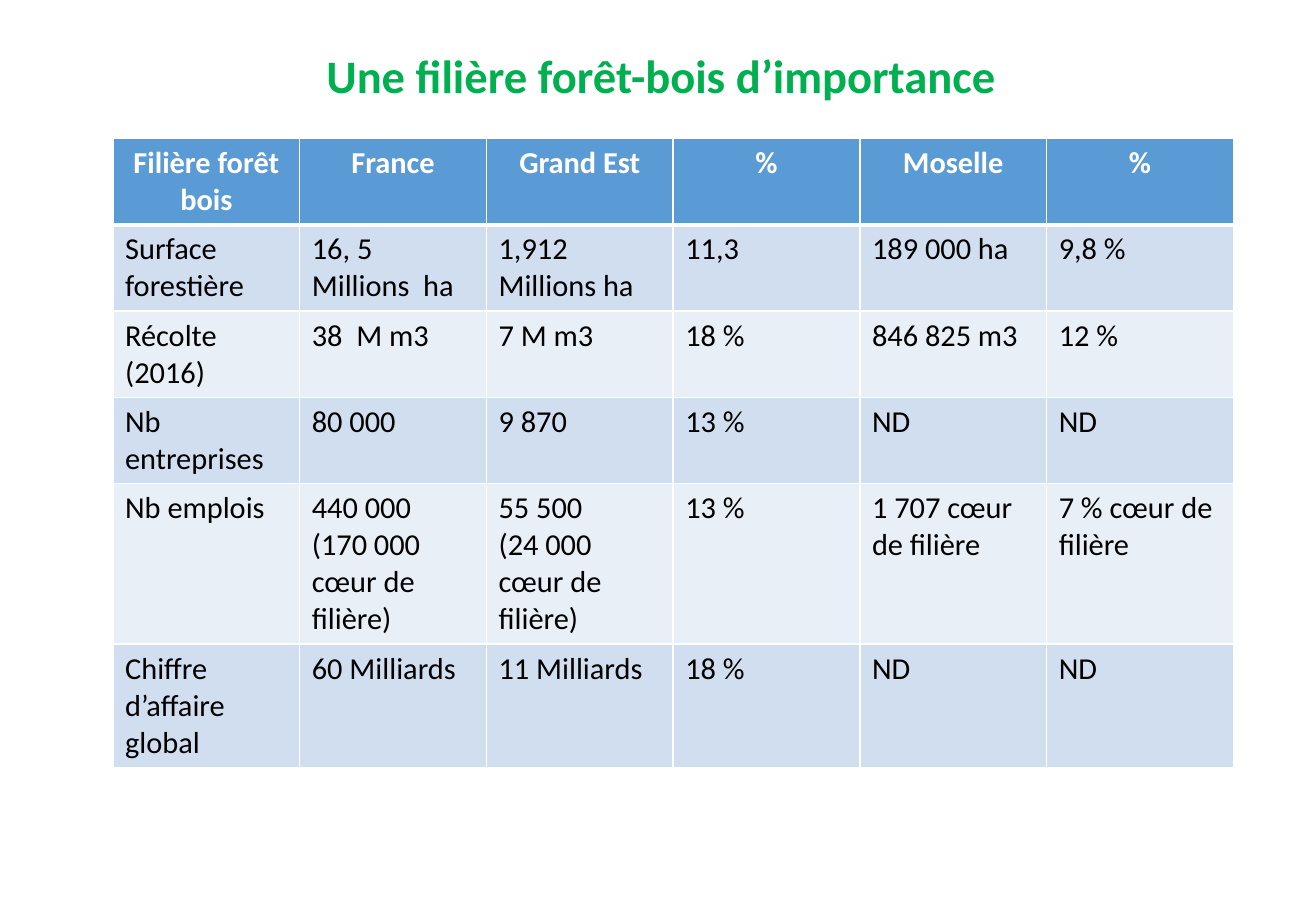
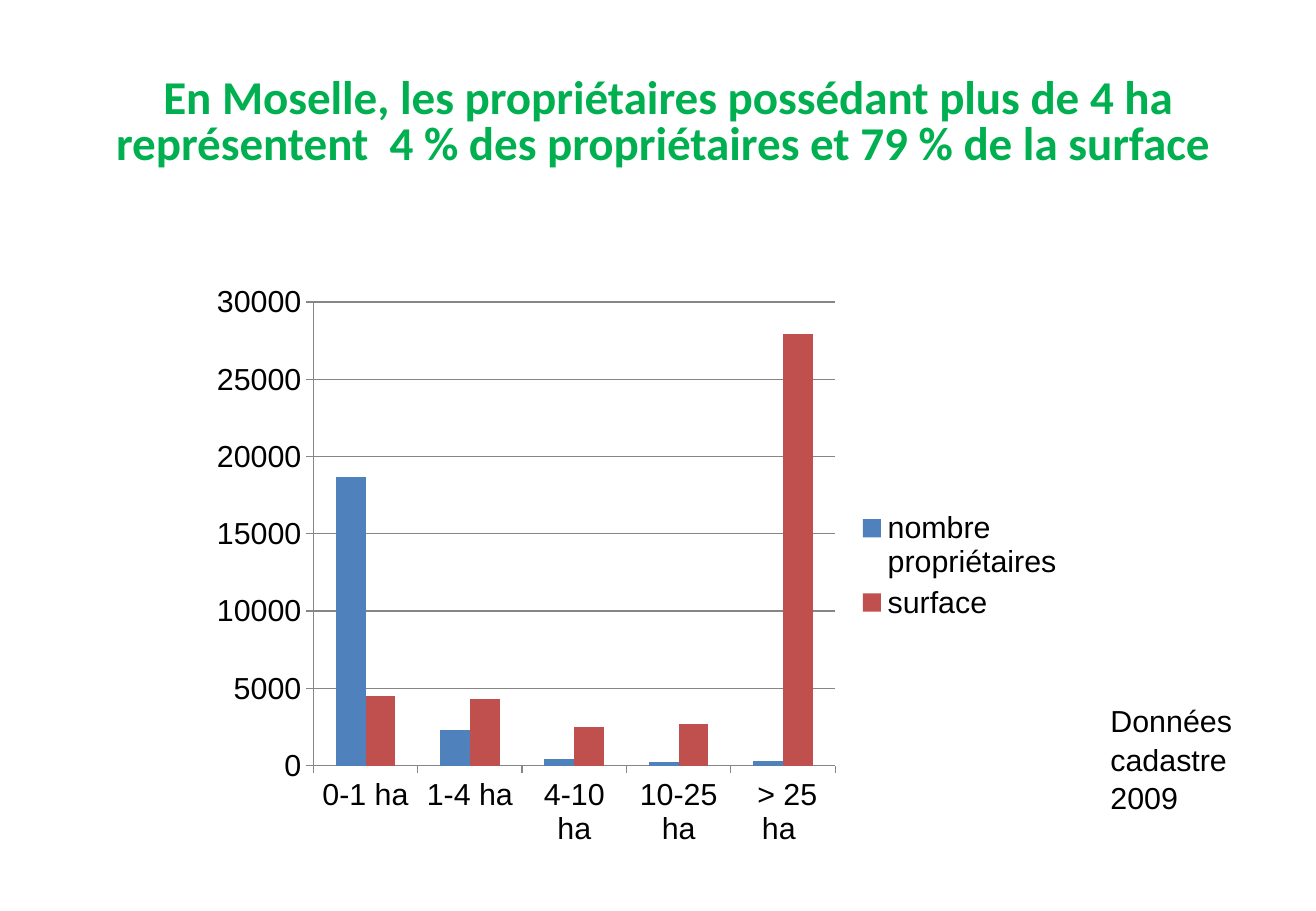
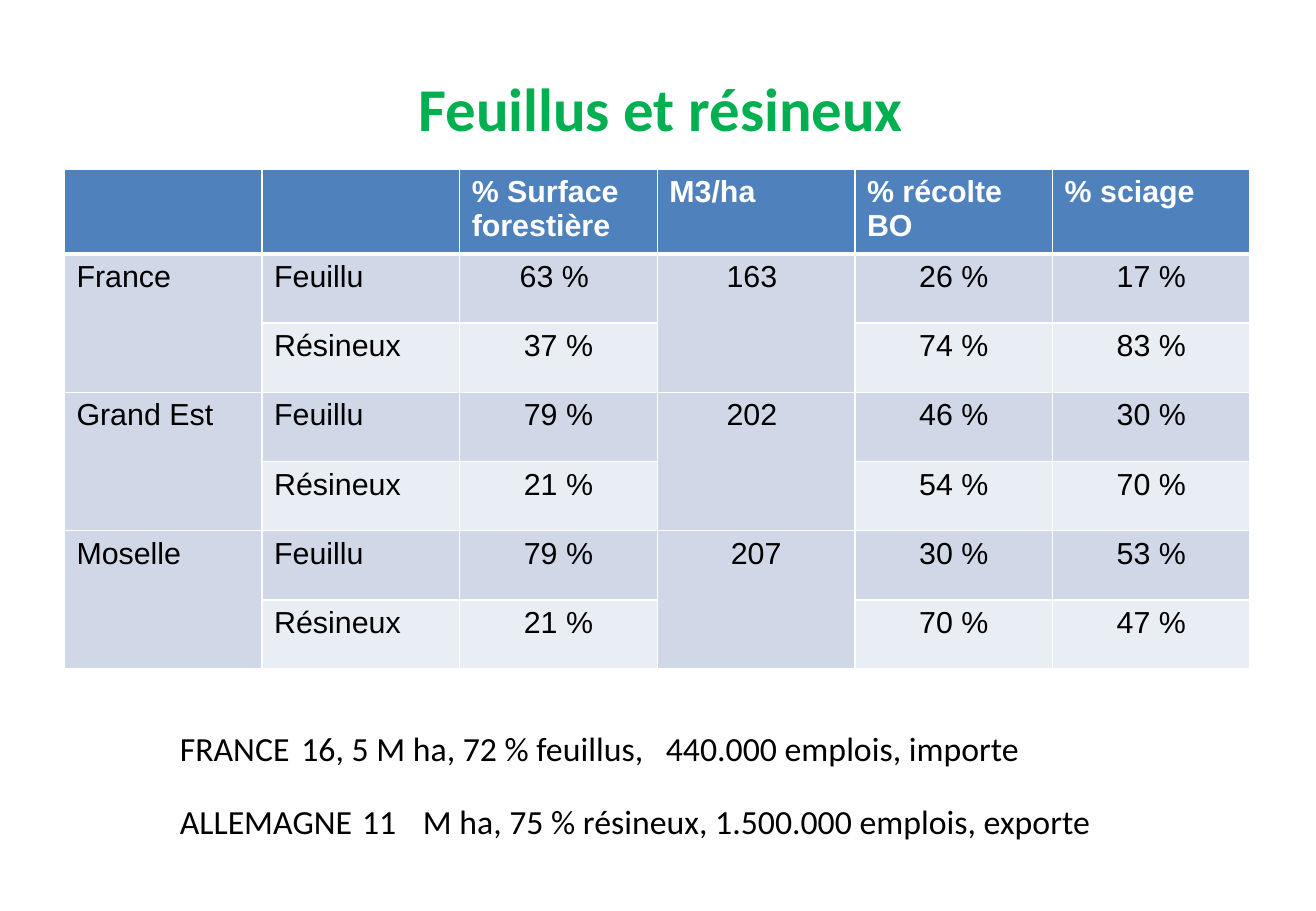
from dataclasses import dataclass

from lxml import etree
from pptx import Presentation
from pptx import util as u
from pptx.chart.data import CategoryChartData
from pptx.dml.color import RGBColor
from pptx.enum import chart as ch, text as tx
from pptx.oxml.ns import qn

# Shared colours and fonts
GREEN = RGBColor(0x00, 0xB0, 0x50)
BLACK = RGBColor(0x00, 0x00, 0x00)
WHITE = RGBColor(0xFF, 0xFF, 0xFF)
BLUE = RGBColor(0x4F, 0x81, 0xBD)
RED = RGBColor(0xC0, 0x50, 0x4D)
GREY = RGBColor(0x86, 0x86, 0x86)
SKY = RGBColor(0x5B, 0x9B, 0xD5)
SANS, ARIAL = "Calibri", "Arial"
LEFT, MID = tx.PP_ALIGN.LEFT, tx.PP_ALIGN.CENTER


@dataclass(frozen=True)
class Box:
    x: float
    y: float
    w: float
    h: float

    def lens(self) -> tuple:
        return tuple(u.Inches(v) for v in (self.x, self.y, self.w, self.h))


@dataclass(frozen=True)
class Face:
    name: str
    size: float
    color: RGBColor = BLACK
    bold: bool = False


@dataclass(frozen=True)
class Look:
    """Style of one table; each row is a list of cell texts."""
    font: str
    head: RGBColor
    odd: RGBColor
    even: RGBColor
    head_al: tx.PP_ALIGN
    mid_from: int
    thin: float


FOREST = Look(SANS, SKY, RGBColor(0xD1, 0xDE, 0xEF), RGBColor(0xE9, 0xEF, 0xF7),
              MID, 6, 0.96)
SPLIT = Look(ARIAL, BLUE, RGBColor(0xD0, 0xD8, 0xE8), RGBColor(0xE9, 0xED, 0xF4),
             LEFT, 2, 1)

FIGURES = [
    ["Filière forêt bois", "France", "Grand Est", "%", "Moselle", "%"],
    ["Surface forestière", "16, 5 Millions  ha", "1,912 Millions ha", "11,3",
     "189 000 ha", "9,8 %"],
    ["Récolte (2016)", "38  M m3", "7 M m3", "18 %", "846 825 m3", "12 %"],
    ["Nb entreprises", "80 000", "9 870", "13 %", "ND", "ND"],
    ["Nb emplois", "440 000\n(170 000 cœur de filière)",
     "55 500\n(24 000 cœur de filière)", "13 %", "1 707 cœur de filière",
     "7 % cœur de filière"],
    ["Chiffre d’affaire global", "60 Milliards", "11 Milliards", "18 %", "ND", "ND"],
]
SHARES = [
    ["", "", "% Surface forestière", "M3/ha", "% récolte BO", "% sciage"],
    ["France", "Feuillu", "63 % ", "163 ", "26 %", "17 %"],
    ["", "Résineux", "37 %", "", "74 %", "83 %"],
    ["Grand Est", "Feuillu", "79 %", "202 ", "46 %", "30 %"],
    ["", "Résineux", "21 %", "", "54 %", "70 %"],
    ["Moselle", "Feuillu", "79 %", "207", "30 %", "53 %"],
    ["", "Résineux", "21 %", "", "70 %", "47 %"],
]
SIZES = ["0-1 ha", "1-4 ha", "4-10 ha", "10-25 ha", " > 25 ha "]
SERIES = [
    ("nombre propriétaires", (18700, 2300, 400, 200, 300), BLUE),
    ("surface", (4500, 4300, 2500, 2700, 27900), RED),
]
# Text of each line with its tab stops in inches
LANDS = [
    ("FRANCE\t16, 5 M ha, 72 % feuillus,\t440.000 emplois, importe", (2.01, 5.19)),
    ("ALLEMAGNE\t11\tM ha, 75 % résineux, 1.500.000 emplois, exporte", (3.01, 3.54)),
]


def style(font, face: Face) -> None:
    font.name, font.size, font.bold = face.name, u.Pt(face.size), face.bold
    font.color.rgb = face.color


def write(para, words: str, face: Face) -> None:
    run = para.add_run()
    run.text = words
    style(run.font, face)


def title(slide, box: Box, lines: list, size: float, space: float) -> None:
    shape = slide.shapes.title
    shape.left, shape.top, shape.width, shape.height = box.lens()
    frame = shape.text_frame
    frame.auto_size = tx.MSO_AUTO_SIZE.NONE
    frame.vertical_anchor = tx.MSO_ANCHOR.MIDDLE
    para = frame.paragraphs[0]
    para.alignment, para.line_spacing = MID, space
    for i, line in enumerate(lines):
        if i:
            para.add_line_break()
        write(para, line, Face(SANS, size, GREEN, True))


def edge(cell, widths: dict) -> None:
    """White borders; widths maps L, R, T, B to points."""
    props = cell._tc.get_or_add_tcPr()
    for i, (side, width) in enumerate(widths.items()):
        line = etree.Element(qn(f"a:ln{side}"), w=str(u.Pt(width)))
        fill = etree.SubElement(line, qn("a:solidFill"))
        etree.SubElement(fill, qn("a:srgbClr"), val=str(WHITE))
        props.insert(i, line)


def table(slide, box: Box, rows: list, highs: list, look: Look):
    grid = slide.shapes.add_table(len(rows), len(rows[0]), *box.lens()).table
    for col in grid.columns:
        col.width = u.Inches(box.w / len(rows[0]))
    for r, row in enumerate(rows):
        grid.rows[r].height = u.Inches(highs[r])
        back = look.head if r == 0 else look.odd if r % 2 else look.even
        face = Face(look.font, 18, BLACK if r else WHITE, r == 0)
        for c, words in enumerate(row):
            cell = grid.cell(r, c)
            cell.fill.solid()
            cell.fill.fore_color.rgb = back
            edge(cell, {"L": look.thin, "R": look.thin,
                        "T": 3 if r == 1 else look.thin,
                        "B": 3 if r == 0 else look.thin})
            frame = cell.text_frame
            for i, line in enumerate(words.split("\n") if words else []):
                para = frame.add_paragraph() if i else frame.paragraphs[0]
                body = MID if c >= look.mid_from else LEFT
                para.alignment = body if r else look.head_al
                write(para, line, face)
    return grid


def bars(slide, box: Box) -> None:
    data = CategoryChartData(number_format="General")
    data.categories = SIZES
    for name, vals, _ in SERIES:
        data.add_series(name, vals)
    kind = ch.XL_CHART_TYPE.COLUMN_CLUSTERED
    chart = slide.shapes.add_chart(kind, *box.lens(), data).chart
    style(chart.font, Face(ARIAL, 18))
    chart.has_title = False
    chart.has_legend = True
    chart.legend.position = ch.XL_LEGEND_POSITION.RIGHT
    chart.legend.include_in_layout = False
    plot = chart.plots[0]
    plot.gap_width, plot.overlap, plot.vary_by_categories = 150, 0, False
    for ser, (_, _, color) in zip(plot.series, SERIES):
        ser.format.fill.solid()
        ser.format.fill.fore_color.rgb = color
        ser.invert_if_negative = False
    val = chart.value_axis
    val.has_major_gridlines = True
    val.minimum_scale, val.maximum_scale, val.major_unit = 0, 30000, 5000
    for axis in (val, chart.category_axis):
        axis.major_tick_mark = ch.XL_TICK_MARK.OUTSIDE
        axis.format.line.color.rgb = GREY
    val.major_gridlines.format.line.color.rgb = GREY


def note(slide, box: Box, words: str) -> None:
    frame = slide.shapes.add_textbox(*box.lens()).text_frame
    frame.word_wrap = True
    para = frame.paragraphs[0]
    para.line_spacing = 1.05
    write(para, words, Face(ARIAL, 18))


def lands(slide, box: Box) -> None:
    """Body lines without bullets, set out on tab stops."""
    shape = slide.placeholders[1]
    shape.left, shape.top, shape.width, shape.height = box.lens()
    frame = shape.text_frame
    frame.auto_size = tx.MSO_AUTO_SIZE.NONE
    for i, (words, stops) in enumerate(LANDS):
        para = frame.add_paragraph() if i else frame.paragraphs[0]
        para.space_before = u.Pt(19.5 if i else 0)
        props = para._p.get_or_add_pPr()
        props.set("marL", "0")
        props.set("indent", "0")
        etree.SubElement(props, qn("a:buNone"))
        tabs = etree.SubElement(props, qn("a:tabLst"))
        for stop in stops:
            etree.SubElement(tabs, qn("a:tab"), pos=str(u.Inches(stop)), algn="l")
        write(para, words, Face(SANS, 20))


def main() -> None:
    deck = Presentation()
    deck.slide_width, deck.slide_height = u.Inches(10.83), u.Inches(7.5)
    listed, plain = deck.slide_layouts[1], deck.slide_layouts[5]

    # Key figures
    slide = deck.slides.add_slide(plain)
    title(slide, Box(0.77, 0.36, 9.34, 0.6),
          ["Une filière forêt-bois d’importance"], 27.6, 0.8)
    table(slide, Box(0.93, 1.14, 9.22, 5.16), FIGURES,
          [0.7, 0.71, 0.71, 0.71, 1.32, 1.01], FOREST)

    # Owners and areas
    slide = deck.slides.add_slide(plain)
    title(slide, Box(0.47, 0.52, 10.06, 1),
          ["En Moselle, les propriétaires possédant plus de 4 ha",
           "représentent  4 % des propriétaires et 79 % de la surface "], 27.9, 0.8)
    bars(slide, Box(1.64, 2.25, 7.22, 4.81))
    note(slide, Box(9.04, 5.72, 1.34, 1.01), "Données cadastre 2009")

    # Broadleaf and conifer shares
    slide = deck.slides.add_slide(listed)
    title(slide, Box(0.77, 0.52, 9.34, 0.72), ["Feuillus et résineux"], 36, 1)
    lands(slide, Box(1.38, 5.94, 9.01, 1.3))
    grid = table(slide, Box(0.53, 1.39, 9.76, 4.12), SHARES,
                 [0.7] + [0.57] * 6, SPLIT)
    for row in (1, 3, 5):
        for col in (0, 3):
            grid.cell(row, col).merge(grid.cell(row + 1, col))

    deck.save("out.pptx")


if __name__ == "__main__":
    main()
